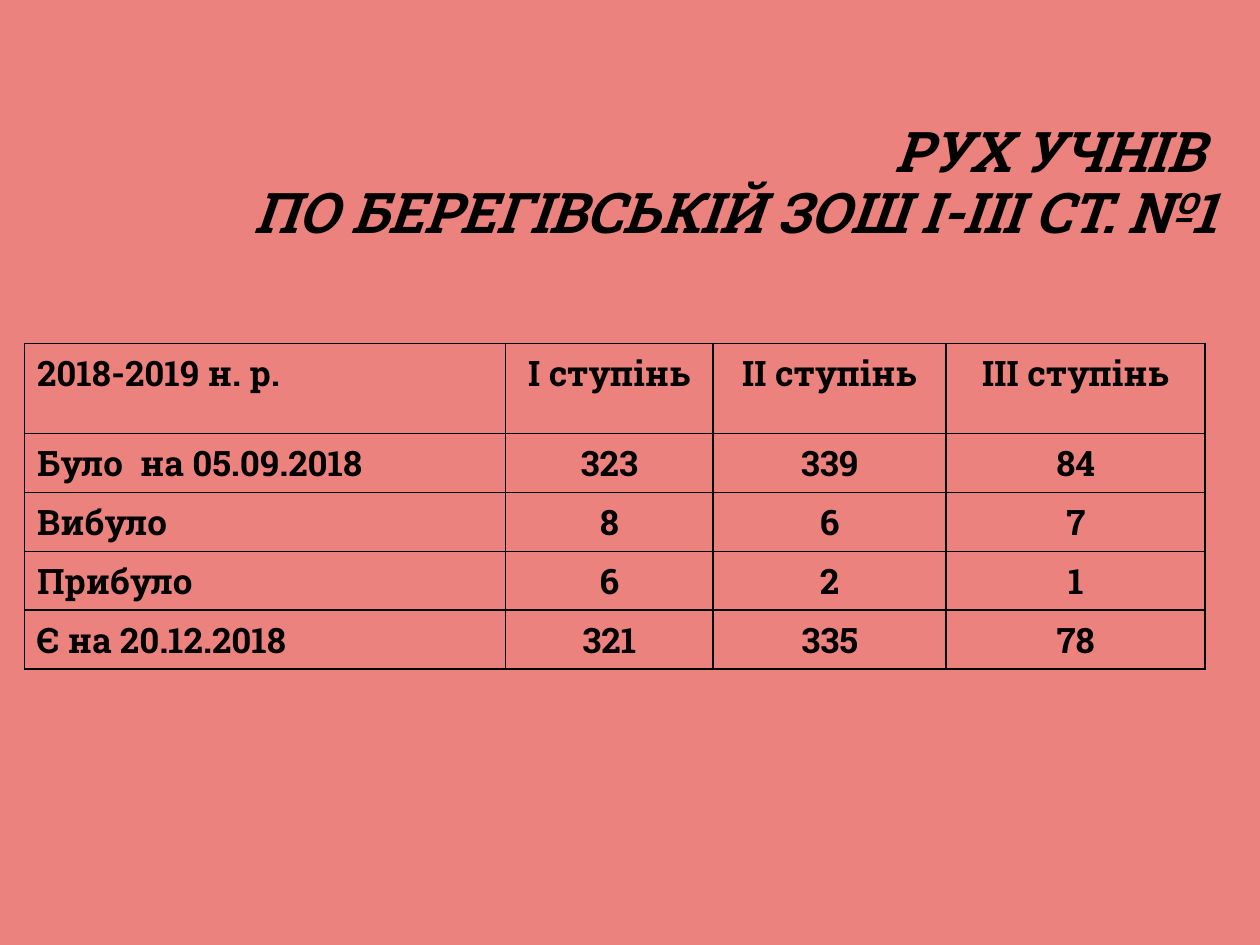
from lxml import etree
from pptx import Presentation
from pptx.dml.color import RGBColor
from pptx.enum import text
from pptx.oxml import ns
from pptx.util import Pt

ROWS = [
    ["2018-2019 н. р.", "І ступінь", "ІІ ступінь", "ІІІ ступінь"],
    ["Було  на 05.09.2018", "323", "339", "84"],
    ["Вибуло", "8", "6", "7"],
    ["Прибуло", "6", "2", "1"],
    ["Є на 20.12.2018", "321", "335", "78"],
]


def color(value):
    return RGBColor.from_string(value)


class Deck:
    font = "Roboto Slab"
    ink = "000000"
    paper = "EC827E"

    def __init__(self, prs):
        self.s = prs.slides.add_slide(prs.slide_layouts[5])
        fill = self.s.background.fill
        fill.solid()
        fill.fore_color.rgb = color(self.paper)

    def paragraph(self, p, content, size, align, italic=False):
        p.text = content
        p.alignment = align
        for r in p.runs:
            r.font.name = self.font
            r.font.size = Pt(size)
            r.font.bold = True
            r.font.italic = italic
            r.font.color.rgb = color(self.ink)

    def title(self, content, left, top, width, height):
        sp = self.s.shapes.title
        sp.left, sp.top, sp.width, sp.height = map(Pt, (left, top, width, height))
        tf = sp.text_frame
        tf.word_wrap = True
        tf.auto_size = text.MSO_AUTO_SIZE.NONE
        tf.vertical_anchor = text.MSO_ANCHOR.MIDDLE
        p = tf.paragraphs[0]
        self.paragraph(p, content, 32, text.PP_ALIGN.RIGHT, italic=True)
        p.line_spacing = 0.9

    def borders(self, cell):
        tcPr = cell._tc.get_or_add_tcPr()
        for i, side in enumerate(("lnL", "lnR", "lnT", "lnB")):
            ln = etree.Element(ns.qn(f"a:{side}"), w=str(Pt(1)))
            fill = etree.SubElement(ln, ns.qn("a:solidFill"))
            etree.SubElement(fill, ns.qn("a:srgbClr"), val=self.ink)
            tcPr.insert(i, ln)

    def table(self, rows, left, top, widths, heights):
        frame = self.s.shapes.add_table(
            len(rows), len(widths), Pt(left), Pt(top), Pt(sum(widths)), Pt(sum(heights)))
        table = frame.table
        table.first_row = table.horz_banding = False
        for column, width in zip(table.columns, widths):
            column.width = Pt(width)
        for row, height, values in zip(table.rows, heights, rows):
            row.height = Pt(height)
            for i, (cell, value) in enumerate(zip(row.cells, values)):
                cell.fill.background()
                self.borders(cell)
                p = cell.text_frame.paragraphs[0]
                align = text.PP_ALIGN.CENTER if i else text.PP_ALIGN.LEFT
                self.paragraph(p, value, 20, align)
                pPr = p._p.get_or_add_pPr()
                pPr.set("marL", str(Pt(27)))
                pPr.set("indent", str(-Pt(27)))


def main():
    prs = Presentation()
    prs.slide_width, prs.slide_height = Pt(720), Pt(540)
    deck = Deck(prs)
    deck.title("РУХ УЧНІВ \nПО БЕРЕГІВСЬКІЙ ЗОШ І-ІІІ СТ. №1", 0, 37.5, 703, 136)
    deck.table(ROWS, 14, 196.25, [275, 118.5, 133.25, 148], [51.5] + [33.6] * 4)
    prs.save("out.pptx")


if __name__ == "__main__":
    main()
